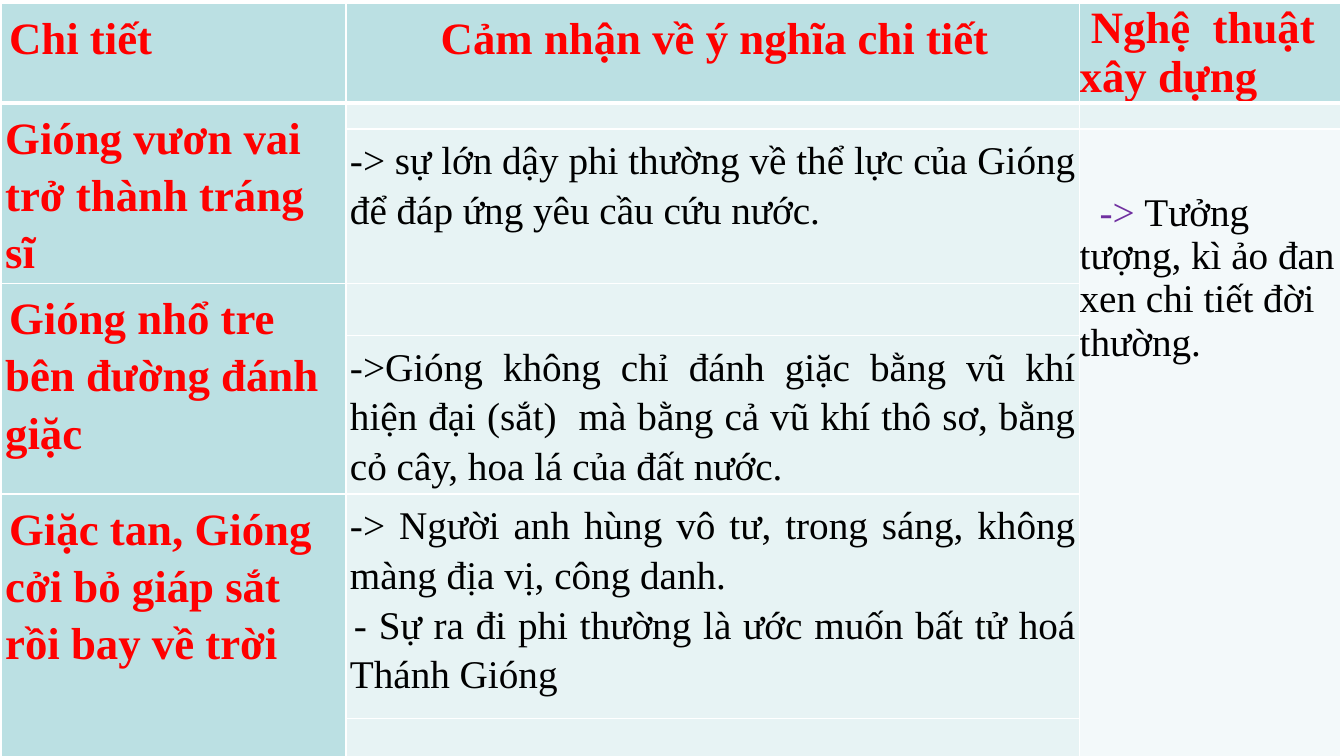
from lxml import etree
from pptx import Presentation
from pptx.dml.color import RGBColor
from pptx.enum import text
from pptx.oxml import ns
from pptx.util import Cm, Pt

FONT = "Times New Roman"
RED, BLACK, PURPLE, WHITE = "FF0000", "000000", "7030A0", "FFFFFF"
TEAL, PALE, PALEST = "BBE0E3", "E7F3F4", "F3F9FA"
LEFT, CENTER, JUSTIFY = text.PP_ALIGN.LEFT, text.PP_ALIGN.CENTER, text.PP_ALIGN.JUSTIFY

COL_WIDTHS = [8.69, 18.49, 6.58]
ROW_HEIGHTS = [2.49, 0.66, 3.89, 1.32, 3.99, 5.66, 8.33, 0.66]
PAD = 0.1

DETAILS = [  # first row, last row, first-line indent, text
    (1, 2, 0, "Gióng vươn vai trở thành tráng sĩ"),
    (3, 4, PAD, "Gióng nhổ tre bên đường đánh giặc"),
    (5, 7, PAD, "Giặc tan, Gióng cởi bỏ giáp sắt rồi bay về trời"),
]
MEANINGS = {  # row: (first-line indent, text) of each paragraph
    2: [(0, "-> sự lớn dậy phi thường về thể lực của Gióng để đáp ứng yêu cầu cứu nước.")],
    4: [(0, "->Gióng không chỉ đánh giặc bằng vũ khí hiện đại (sắt)  mà bằng cả vũ khí "
            "thô sơ, bằng cỏ cây, hoa lá của đất nước.")],
    5: [(0, "-> Người anh hùng vô tư, trong sáng, không màng địa vị, công danh."),
        (PAD, "- Sự ra đi phi thường là ước muốn bất tử hoá Thánh Gióng")],
}
ART = [("-> ", PURPLE), ("Tưởng tượng, kì ảo đan xen chi tiết đời thường.", BLACK)]


def rgb(value):
    return RGBColor.from_string(value)


def set_border(cell, side, width):
    ln = etree.SubElement(cell._tc.get_or_add_tcPr(), ns.qn(f"a:ln{side}"), w=str(Pt(width)))
    fill = etree.SubElement(ln, ns.qn("a:solidFill"))
    etree.SubElement(fill, ns.qn("a:srgbClr"), val=WHITE)


def set_margins(cell, side, top=None):
    cell.margin_left = cell.margin_right = cell.margin_bottom = Cm(side)
    cell.margin_top = Cm(side if top is None else top)


def style_cell(cell, row, fill):
    """Give a cell its borders and fill, and small type so that empty rows stay low."""
    for side in "LRTB":
        thick = (row, side) in ((0, "B"), (1, "T"))
        set_border(cell, side, 3 if thick else 1)
    cell.fill.solid()
    cell.fill.fore_color.rgb = rgb(fill)
    set_margins(cell, 0)
    cell.text_frame.paragraphs[0]._p.get_or_add_endParaRPr().set("sz", "1000")


def format_paragraph(p, size, color=None, bold=False, align=LEFT, indent=0, spacing=1.15):
    p.alignment = align
    p.line_spacing = spacing
    p._p.get_or_add_pPr().set("indent", str(Cm(indent)))
    p.font.name, p.font.size, p.font.bold = FONT, Pt(size), bold
    if color:
        p.font.color.rgb = rgb(color)


def write_heading(cell, words, pad=PAD, **style):
    set_margins(cell, pad)
    p = cell.text_frame.paragraphs[0]
    p.text = words
    format_paragraph(p, 32, RED, bold=True, **style)


def write_meaning(cell, paragraphs):
    set_margins(cell, PAD)
    tf = cell.text_frame
    for i, (indent, words) in enumerate(paragraphs):
        p = tf.add_paragraph() if i else tf.paragraphs[0]
        p.text = words
        format_paragraph(p, 28, BLACK, align=JUSTIFY, indent=indent)


def write_art(cell):
    set_margins(cell, 0, top=1.57)
    p = cell.text_frame.paragraphs[0]
    format_paragraph(p, 28, indent=0.5, spacing=1)
    for words, color in ART:
        r = p.add_run()
        r.text = words
        r.font.color.rgb = rgb(color)


def add_grid(s):
    sp = s.shapes.add_table(len(ROW_HEIGHTS), len(COL_WIDTHS), Cm(0.03), Cm(0.08),
                            Cm(sum(COL_WIDTHS)), Cm(sum(ROW_HEIGHTS)))
    table = sp.table
    table.first_row = table.horz_banding = False
    for column, width in zip(table.columns, COL_WIDTHS):
        column.width = Cm(width)
    for i, height in enumerate(ROW_HEIGHTS):
        table.rows[i].height = Cm(height)
        for j in range(len(COL_WIDTHS)):
            fill = TEAL if i == 0 or j == 0 else PALEST if j == 2 and 2 <= i <= 6 else PALE
            style_cell(table.cell(i, j), i, fill)
    return table


def main():
    prs = Presentation()
    prs.slide_width, prs.slide_height = Cm(33.87), Cm(19.05)
    s = prs.slides.add_slide(prs.slide_layouts[6])
    table = add_grid(s)

    write_heading(table.cell(0, 0), "Chi tiết", indent=PAD)
    write_heading(table.cell(0, 1), "Cảm nhận về ý nghĩa chi tiết", align=CENTER, indent=PAD)
    write_heading(table.cell(0, 2), "Nghệ  thuật xây dựng", pad=0, indent=0.28, spacing=1)
    table.cell(0, 2).vertical_anchor = text.MSO_ANCHOR.MIDDLE

    for first, last, indent, words in DETAILS:
        table.cell(first, 0).merge(table.cell(last, 0))
        write_heading(table.cell(first, 0), words, indent=indent)
    for row, paragraphs in MEANINGS.items():
        write_meaning(table.cell(row, 1), paragraphs)
    table.cell(2, 2).merge(table.cell(6, 2))
    write_art(table.cell(2, 2))

    prs.save("out.pptx")


if __name__ == "__main__":
    main()
